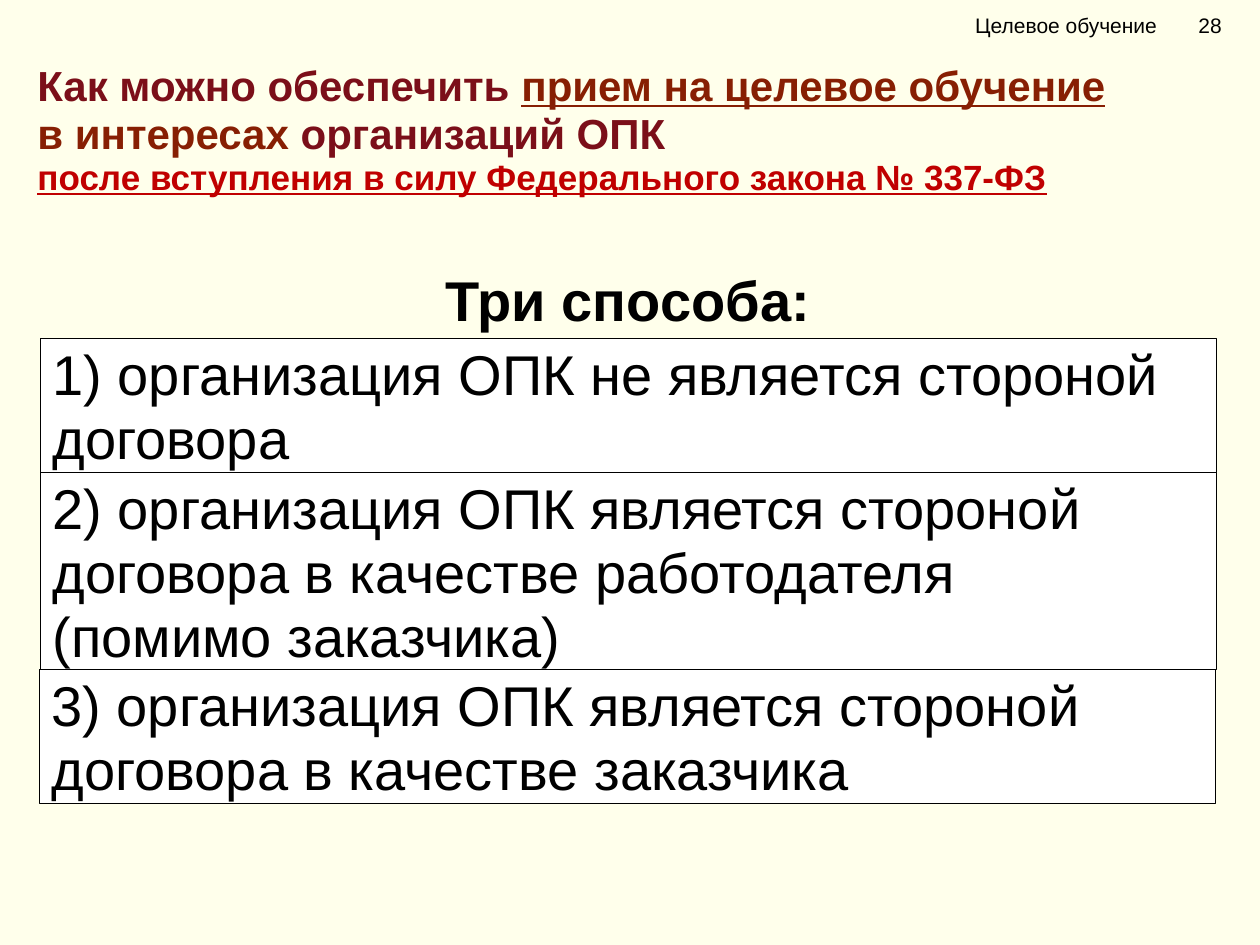
from dataclasses import dataclass

from lxml.etree import SubElement
from pptx import Presentation
from pptx.dml.color import RGBColor as Color
from pptx.enum.shapes import MSO_SHAPE as Shape
from pptx.enum.text import MSO_ANCHOR as Anchor, MSO_AUTO_SIZE as AutoSize, PP_ALIGN as Align
from pptx.oxml.ns import qn
from pptx.util import Cm, Pt


@dataclass(frozen=True)
class Theme:
    font: str = "Arial"
    background: Color = Color(0xFF, 0xFF, 0xEB)
    white: Color = Color(0xFF, 0xFF, 0xFF)
    black: Color = Color(0, 0, 0)
    maroon: Color = Color(0x7B, 0x0F, 0x19)
    brown: Color = Color(0x87, 0x1F, 0x03)
    red: Color = Color(0xC0, 0, 0)
    title_size: int = 24
    law_size: int = 20
    body_size: int = 32
    header_size: int = 12
    line_spacing: float = 0.95
    border: float = 0.25


THEME = Theme()


@dataclass(frozen=True)
class Span:
    text: str
    color: Color = THEME.black
    size: int = THEME.body_size
    bold: bool = False
    underline: bool = False


@dataclass(frozen=True)
class Option:
    """One way of admission; height follows the number of lines."""
    lines: list[str]
    height: float
    left: float = 0.81


TITLE = [
    [Span("Как можно обеспечить ", THEME.maroon, THEME.title_size, True),
     Span("прием на целевое обучение", THEME.brown, THEME.title_size, True, True)],
    [Span("в интересах ", THEME.brown, THEME.title_size, True),
     Span("организаций ОПК", THEME.maroon, THEME.title_size, True)],
    [Span("после вступления в силу Федерального закона № 337-ФЗ",
          THEME.red, THEME.law_size, True, True)],
]
OPTIONS = [
    Option(["1) организация ОПК не является стороной договора"], 2.71),
    Option(["2) организация ОПК является стороной договора в качестве работодателя",
            "(помимо заказчика)"], 3.96),
    Option(["3) организация ОПК является стороной договора в качестве заказчика"], 2.71, 0.79),
]
HEADING_TOP, OPTIONS_TOP, COLUMN_WIDTH = 5.33, 6.82, 23.7


def place(shape, left: float, top: float, width: float, height: float) -> None:
    shape.left, shape.top, shape.width, shape.height = map(Cm, (left, top, width, height))


def write(shape, lines: list[list[Span]], align=Align.LEFT, anchor=Anchor.TOP,
          spacing: float = THEME.line_spacing) -> None:
    frame = shape.text_frame
    frame.word_wrap, frame.auto_size = True, AutoSize.NONE
    frame.vertical_anchor = anchor
    frame.text = "\n".join("" for _ in lines)
    for para, spans in zip(frame.paragraphs, lines):
        para.alignment, para.line_spacing = align, spacing
        para.space_before = Pt(0)
        for span in spans:
            run = para.add_run()
            run.text = span.text
            font = run.font
            font.name, font.size = THEME.font, Pt(span.size)
            font.bold, font.underline = span.bold, span.underline
            font.color.rgb = span.color


def add_option(slide, option: Option, top: float) -> None:
    box = slide.shapes.add_shape(Shape.RECTANGLE, Cm(option.left), Cm(top),
                                 Cm(COLUMN_WIDTH), Cm(option.height))
    box.shadow.inherit = False
    box.fill.solid()
    box.fill.fore_color.rgb = THEME.white
    box.line.color.rgb = THEME.black
    box.line.width = Pt(THEME.border)
    write(box, [[Span(line)] for line in option.lines])


def add_header(slide) -> None:
    """Section name and page number, set apart by a tab stop."""
    box = slide.shapes.add_textbox(Cm(18.9), Cm(0), Cm(6.5), Cm(1.02))
    box.text_frame.margin_left = Cm(0.76)
    write(box, [[Span("Целевое обучение\t28", size=THEME.header_size)]],
          anchor=Anchor.MIDDLE, spacing=1.0)
    properties = box.text_frame.paragraphs[0]._p.get_or_add_pPr()
    tabs = SubElement(properties, qn("a:tabLst"))
    SubElement(tabs, qn("a:tab"), pos=str(Cm(4.5)), algn="l")


def main() -> None:
    deck = Presentation()
    deck.slide_width, deck.slide_height = Cm(25.4), Cm(19.05)
    slide = deck.slides.add_slide(deck.slide_layouts.get_by_name("Title Only"))
    slide.background.fill.solid()
    slide.background.fill.fore_color.rgb = THEME.background

    title = slide.shapes.title
    place(title, 0.5, 1.14, 23.9, 1.2)
    write(title, TITLE)

    heading = slide.shapes.add_textbox(Cm(0.81), Cm(HEADING_TOP), Cm(COLUMN_WIDTH), Cm(1.5))
    write(heading, [[Span("Три способа:", bold=True)]], Align.CENTER)

    top = OPTIONS_TOP
    for option in OPTIONS:
        add_option(slide, option, top)
        top += option.height

    add_header(slide)
    deck.save("out.pptx")


if __name__ == "__main__":
    main()
